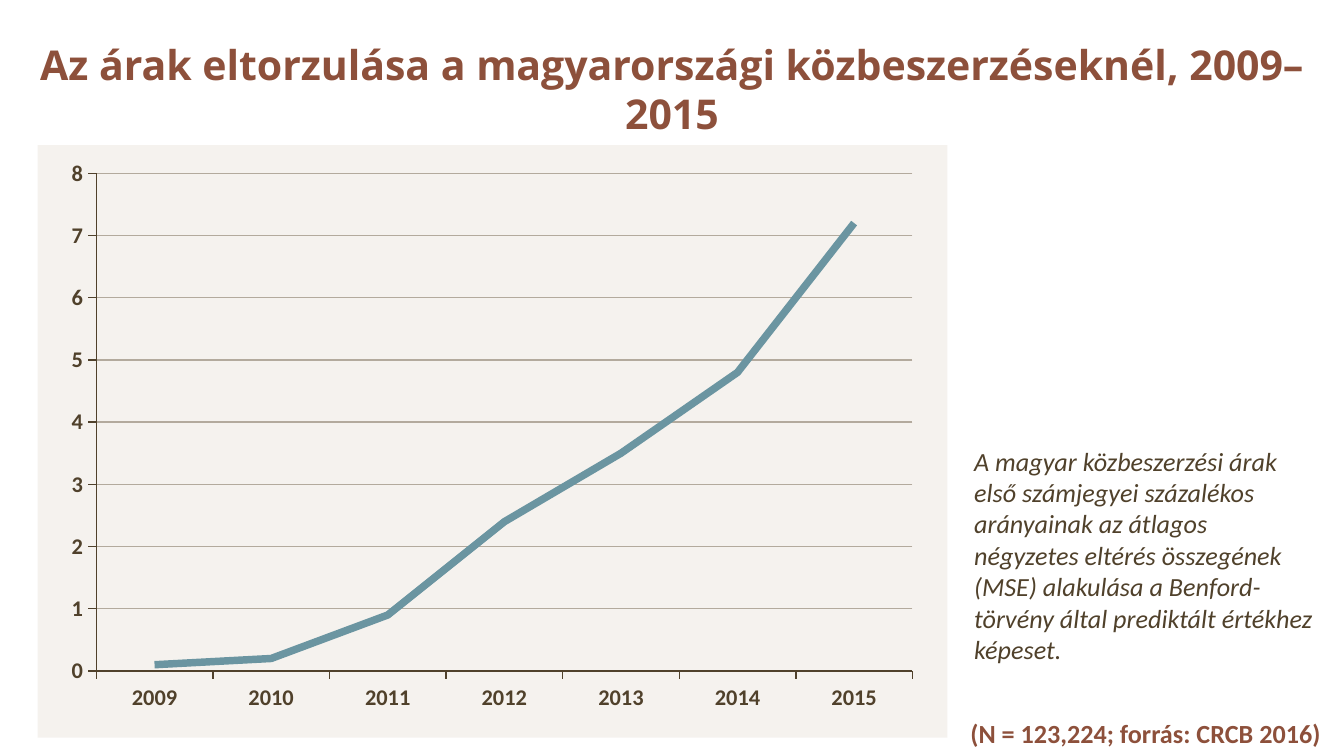
from dataclasses import dataclass

from lxml import etree
from pptx import Presentation
from pptx.chart.data import CategoryChartData
from pptx.dml.color import RGBColor
from pptx.enum.chart import XL_CHART_TYPE, XL_MARKER_STYLE, XL_TICK_MARK
from pptx.enum.shapes import MSO_SHAPE
from pptx.enum.text import MSO_ANCHOR, MSO_AUTO_SIZE, PP_ALIGN
from pptx.oxml.ns import qn
from pptx.util import Inches, Pt

LINE_CHART = XL_CHART_TYPE.LINE
NO_MARKER = XL_MARKER_STYLE.NONE
TICK_OUT = XL_TICK_MARK.OUTSIDE
RECTANGLE = MSO_SHAPE.RECTANGLE
MIDDLE = MSO_ANCHOR.MIDDLE
GROW = MSO_AUTO_SIZE.SHAPE_TO_FIT_TEXT
FIXED = MSO_AUTO_SIZE.NONE
LEFT, CENTER = PP_ALIGN.LEFT, PP_ALIGN.CENTER
TITLE_ONLY = 5


@dataclass(frozen=True)
class Theme:
    accent: str = "8D503B"
    ink: str = "50412B"
    panel: str = "EFEAE4"
    grid: str = "B3AA9D"
    trend: str = "6B95A1"
    heading_font: str = "Open Sans"
    body_font: str = "Calibri"
    title_size: float = 22
    text_size: float = 14
    axis_size: float = 12
    trend_width: float = 4
    hairline: float = 0.75


def style_font(font, name, size, color, bold=False, italic=False):
    font.name, font.size = name, Pt(size)
    font.bold, font.italic = bold, italic
    font.color.rgb = RGBColor.from_string(color)


def write(frame, text, align=LEFT, **font_format):
    frame.word_wrap = True
    paragraph = frame.paragraphs[0]
    paragraph.alignment = align
    run = paragraph.add_run()
    run.text = text
    style_font(run.font, **font_format)


def style_line(line, color, width):
    line.color.rgb = RGBColor.from_string(color)
    line.width = Pt(width)


class SlideBuilder:
    """Places elements by percentages of the slide's width and height."""

    def __init__(self, deck, theme):
        self.deck, self.theme = deck, theme
        self.slide = deck.slides.add_slide(deck.slide_layouts[TITLE_ONLY])

    def area(self, left, top, width, height):
        across, down = self.deck.slide_width / 100, self.deck.slide_height / 100
        return [round(n) for n in (left * across, top * down, width * across, height * down)]

    def title(self, text, *place):
        heading = self.slide.shapes.title
        heading.left, heading.top, heading.width, heading.height = self.area(*place)
        heading.text_frame.vertical_anchor = MIDDLE
        heading.text_frame.auto_size = FIXED
        write(heading.text_frame, text, align=CENTER, name=self.theme.heading_font,
              size=self.theme.title_size, color=self.theme.accent, bold=True)

    def panel(self, *place, opacity):
        backdrop = self.slide.shapes.add_shape(RECTANGLE, *self.area(*place))
        backdrop.shadow.inherit = False
        backdrop.line.fill.background()
        backdrop.fill.solid()
        backdrop.fill.fore_color.rgb = RGBColor.from_string(self.theme.panel)
        tint = backdrop.fill._xPr.find(".//" + qn("a:srgbClr"))
        etree.SubElement(tint, qn("a:alpha"), val=str(opacity * 1000))

    def text(self, text, *place, **text_format):
        frame = self.slide.shapes.add_textbox(*self.area(*place)).text_frame
        frame.auto_size = GROW
        write(frame, text, name=self.theme.body_font, size=self.theme.text_size, **text_format)

    def line_chart(self, values, *place, plot, top_value):
        theme = self.theme
        data = CategoryChartData()
        data.categories = list(values)
        data.add_series("Series 1", list(values.values()))
        chart = self.slide.shapes.add_chart(LINE_CHART, *self.area(*place), data).chart
        chart.has_legend = chart.has_title = False
        style_font(chart.font, theme.body_font, theme.axis_size, theme.ink, bold=True)

        # Axes and gridlines
        for axis in (chart.category_axis, chart.value_axis):
            axis.major_tick_mark = TICK_OUT
            style_font(axis.tick_labels.font, theme.body_font, theme.axis_size,
                       theme.ink, bold=True)
            style_line(axis.format.line, theme.ink, theme.hairline)
        scale = chart.value_axis
        scale.minimum_scale, scale.maximum_scale, scale.major_unit = 0, top_value, 1
        style_line(scale.major_gridlines.format.line, theme.grid, theme.hairline)

        # Trend line
        chart.plots[0].vary_by_categories = False
        trend = chart.plots[0].series[0]
        trend.smooth = False
        style_line(trend.format.line, theme.trend, theme.trend_width)
        trend.marker.style = NO_MARKER
        self.place_plot(chart, plot)

    def place_plot(self, chart, plot):
        plot_area = chart._chartSpace.find(".//" + qn("c:plotArea"))
        for old in plot_area.findall(qn("c:layout")):
            plot_area.remove(old)
        layout = etree.Element(qn("c:layout"))
        manual = etree.SubElement(layout, qn("c:manualLayout"))
        settings = [("layoutTarget", "inner"), ("xMode", "edge"), ("yMode", "edge")]
        settings += zip("xywh", plot)
        for tag, value in settings:
            etree.SubElement(manual, qn("c:" + tag), val=str(value))
        plot_area.insert(0, layout)


def main():
    deck = Presentation()
    deck.slide_width = Inches(10)
    deck.slide_height = deck.slide_width * 9 // 16
    theme = Theme()
    page = SlideBuilder(deck, theme)

    page.title("Az árak eltorzulása a magyarországi közbeszerzéseknél, 2009–2015",
               1.2, 0, 97.6, 23.47)

    # Price distortion by year
    distortion = {"2009": 0.1, "2010": 0.2, "2011": 0.9, "2012": 2.4,
                  "2013": 3.5, "2014": 4.8, "2015": 7.2}
    page.panel(2.8, 19.2, 67.7, 78.4, opacity=60)
    page.line_chart(distortion, 1.38, 19.2, 72.3, 74.84,
                    plot=(0.08, 0.05, 0.84, 0.88), top_value=8)

    # Explanation and source
    page.text("A magyar közbeszerzési árak első számjegyei százalékos arányainak az "
              "átlagos négyzetes eltérés összegének (MSE) alakulása a Benford-törvény "
              "által prediktált értékhez képeset.",
              71.5, 58, 27.52, 31.11, color=theme.ink, italic=True)
    page.text("(N = 123,224; forrás: CRCB 2016)", 70.5, 94.04, 29.5, 6.04,
              align=CENTER, color=theme.accent, bold=True)

    deck.save("out.pptx")


if __name__ == "__main__":
    main()
